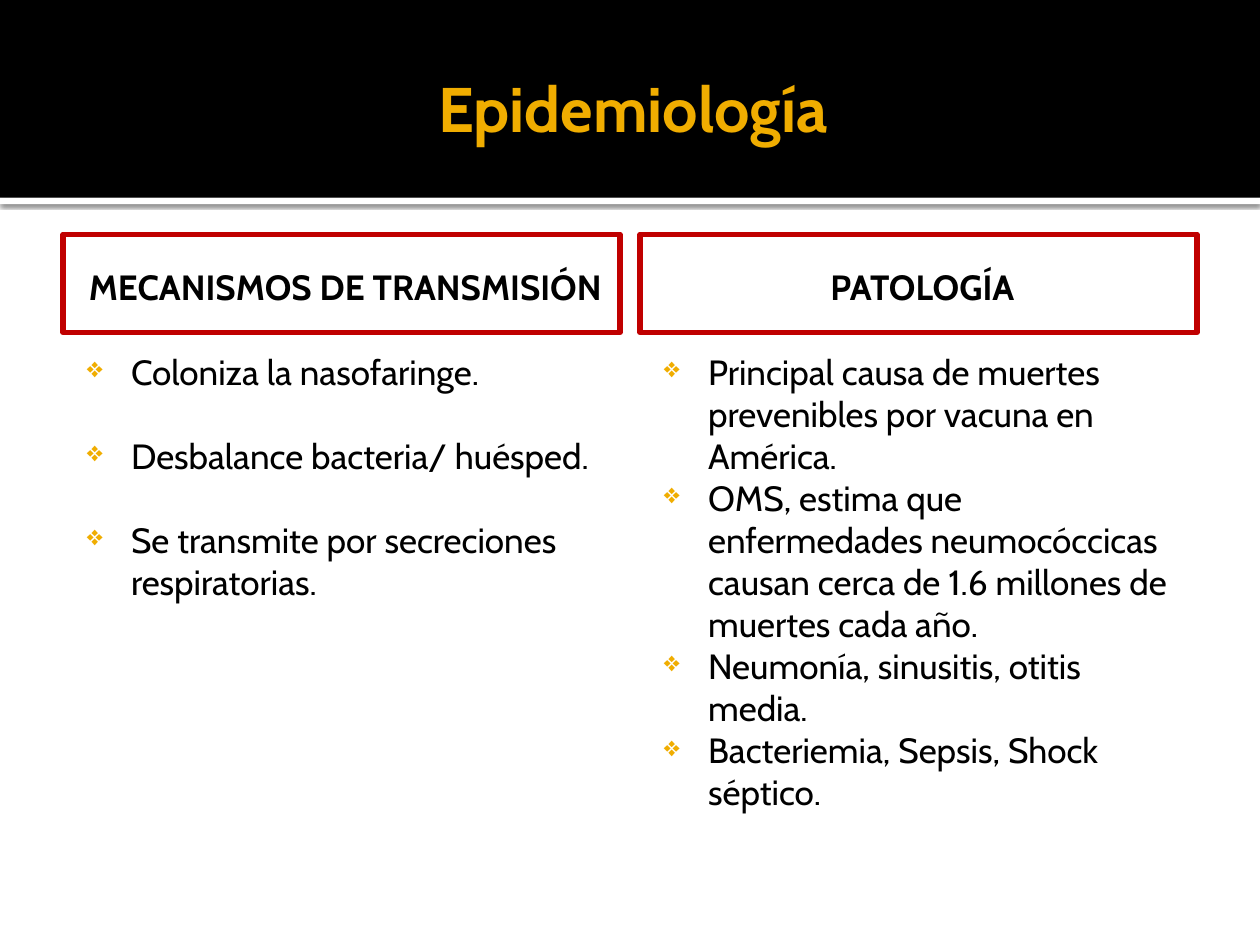
"""Build the Epidemiología slide: a title band over two headed bullet columns."""
import pptx
import pptx.dml.color
import pptx.enum.shapes
import pptx.enum.text
import pptx.oxml
import pptx.oxml.ns
import pptx.util

Inches, Pt = pptx.util.Inches, pptx.util.Pt
ALIGN, ANCHOR = pptx.enum.text.PP_ALIGN, pptx.enum.text.MSO_ANCHOR

TITLE = "Epidemiología"
COLUMNS = [
    {"heading": "MECANISMOS DE TRANSMISIÓN", "gap": 24, "items": [
        "Coloniza la nasofaringe.",
        "Desbalance bacteria/ huésped.",
        "Se transmite por secreciones respiratorias."]},
    {"heading": "PATOLOGÍA", "gap": 0, "items": [
        "Principal causa de muertes prevenibles por vacuna en América.",
        "OMS, estima que enfermedades neumocóccicas causan cerca de 1.6 millones de muertes cada año.",
        "Neumonía, sinusitis, otitis media.",
        "Bacteriemia, Sepsis, Shock séptico."]},
]
FONT = "Cabin"
GOLD, RED, BLACK, WHITE = "F0AD00", "C00000", "000000", "FFFFFF"
LEFT, PITCH, WIDTH = 0.5, 4.58, 4.42


def rgb(color):
    return pptx.dml.color.RGBColor.from_string(color)


def add_xml(parent, body):
    parent.append(pptx.oxml.parse_xml(body.replace(" ", f" {pptx.oxml.ns.nsdecls('a')} ", 1)))


def add_rect(s, box, fill=None, line=None):
    sp = s.shapes.add_shape(pptx.enum.shapes.MSO_SHAPE.RECTANGLE, *map(Inches, box))
    sp.shadow.inherit = False
    if fill:
        sp.fill.solid()
        sp.fill.fore_color.rgb = rgb(fill)
    else:
        sp.fill.background()
    if line:
        sp.line.color.rgb = rgb(line)
        sp.line.width = Pt(3)
    else:
        sp.line.fill.background()
    return sp


def add_shadow(sp):
    add_xml(sp._element.spPr.find(pptx.oxml.ns.qn("a:effectLst")),
            '<a:outerShdw blurRad="31750" dist="10160" dir="5400000">'
            '<a:srgbClr val="000000"><a:alpha val="60000"/></a:srgbClr></a:outerShdw>')


def add_bullet(p):
    pPr = p._p.get_or_add_pPr()
    pPr.set("marL", str(Inches(0.48)))
    pPr.set("indent", str(Inches(-0.35)))
    add_xml(pPr, f'<a:buClr ><a:srgbClr val="{GOLD}"/></a:buClr>')
    add_xml(pPr, '<a:buSzPct val="80000"/>')
    add_xml(pPr, '<a:buChar char="❖"/>')


def write(sp, lines, insets, size=20, color=BLACK, bold=False, align=ALIGN.CENTER,
          anchor=ANCHOR.MIDDLE, bullets=False, gap=0):
    tf = sp.text_frame
    tf.word_wrap = True
    tf.vertical_anchor = anchor
    tf.margin_left, tf.margin_top, tf.margin_right, tf.margin_bottom = map(Inches, insets)
    for i, line in enumerate(lines):
        p = tf.paragraphs[0] if i == 0 else tf.add_paragraph()
        p.text = line
        p.alignment = align
        if bullets:
            add_bullet(p)
        p.space_before = Pt(gap if i else 0)
        p.font.name, p.font.size, p.font.bold = FONT, Pt(size), bold
        p.font.color.rgb = rgb(color)


def main():
    prs = pptx.Presentation()
    prs.slide_width, prs.slide_height = Inches(10), Inches(7.5)
    s = prs.slides.add_slide(prs.slide_layouts[6])

    add_shadow(add_rect(s, (0, 1.57, 10, 0.05), WHITE))
    add_rect(s, (0, 0, 10, 1.57), BLACK)
    title = s.shapes.add_textbox(*map(Inches, (0.5, 0.17, 9, 1.37)))
    write(title, [TITLE], (0.1, 0.05, 0.05, 0.05), size=36, color=GOLD, bold=True)

    for i, column in enumerate(COLUMNS):
        x = LEFT + i * PITCH
        heading = add_rect(s, (x, 1.86, WIDTH, 0.78), line=RED)
        write(heading, [column["heading"]], (0.16, 0.1, 0.1, 0.05), bold=True)
        body = s.shapes.add_textbox(*map(Inches, (x, 2.68, WIDTH, 4.32)))
        write(body, column["items"], (0.06, 0.1, 0.1, 0.05), align=ALIGN.LEFT,
              anchor=ANCHOR.TOP, bullets=True, gap=column["gap"])

    prs.save("out.pptx")


if __name__ == "__main__":
    main()
